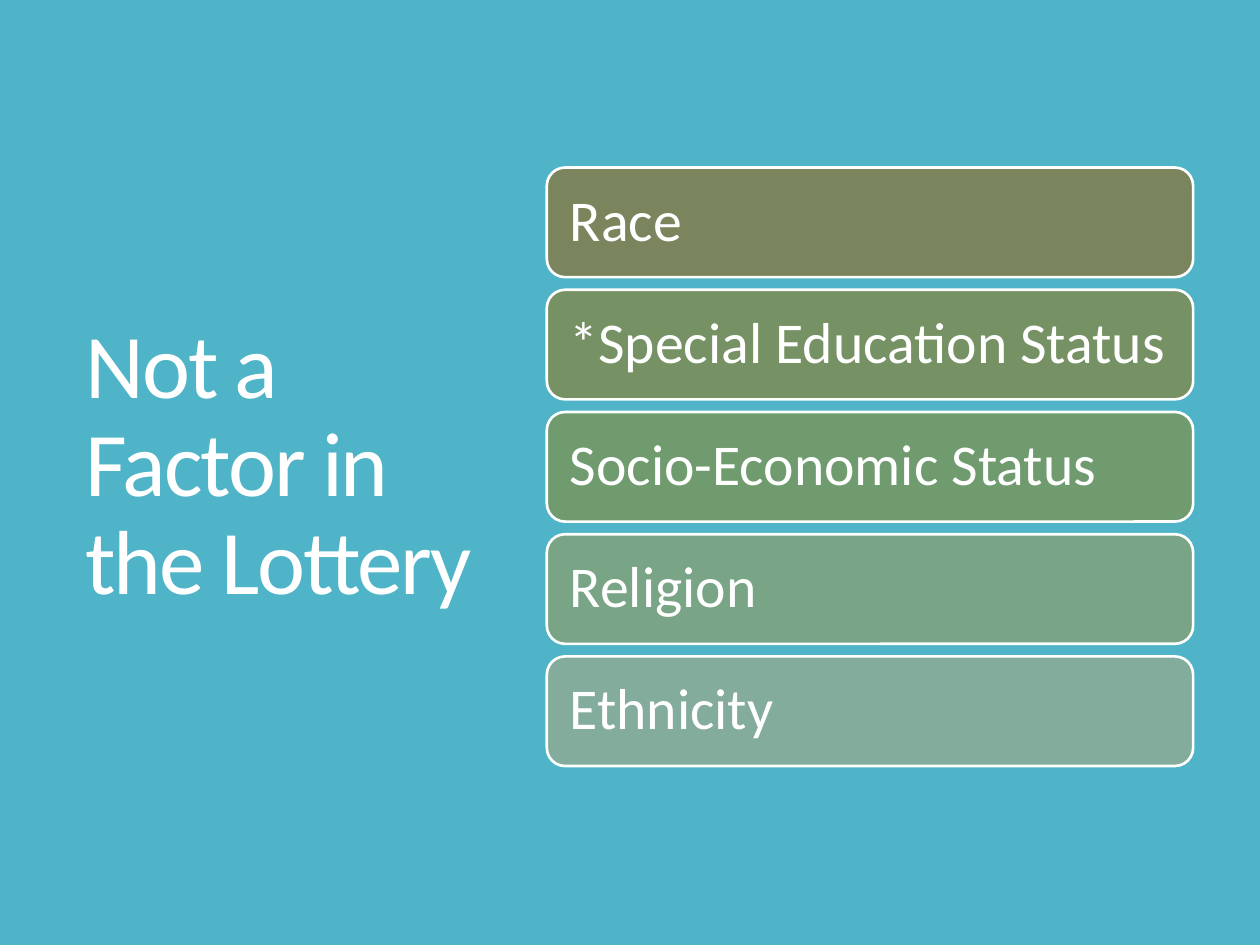
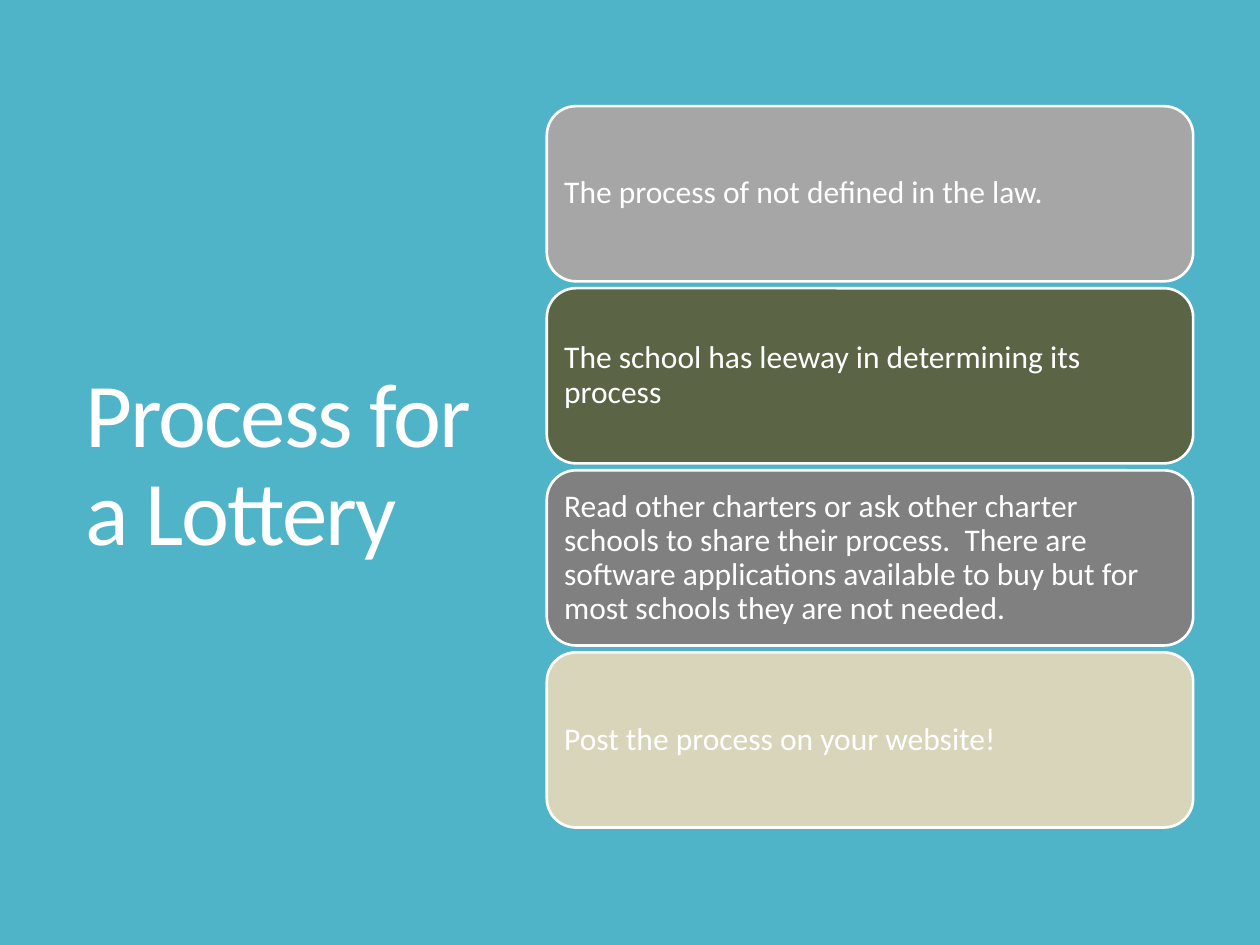
from pptx import Presentation
from pptx.dml.color import RGBColor as RGB
from pptx.enum.shapes import MSO_SHAPE as Shape
from pptx.enum.text import MSO_ANCHOR as Anchor, MSO_AUTO_SIZE as Fit, PP_ALIGN as Align
from pptx.util import Inches, Pt

TEAL = RGB(0x50, 0xB4, 0xC8)
WHITE = RGB(0xFF, 0xFF, 0xFF)
OLIVE = RGB(0x7A, 0x85, 0x5D)
MOSS = RGB(0x76, 0x91, 0x64)
GREEN = RGB(0x70, 0x9B, 0x6E)
SAGE = RGB(0x79, 0xA4, 0x85)
MIST = RGB(0x84, 0xAC, 0x9D)
SILVER = RGB(0xA6, 0xA6, 0xA6)
FOREST = RGB(0x5C, 0x64, 0x46)
GRAY = RGB(0x80, 0x80, 0x80)
SAND = RGB(0xD9, 0xD5, 0xBA)

FONT = "Calibri"
LEFT, WIDTH = 4.34, 5.13
MIDDLE = 3.705

SLIDES = [
    {
        "title": "Not a Factor in the Lottery",
        "size": 33, "height": 0.87, "gap": 0.1, "inset": 0.14,
        "bars": [
            ("Race", OLIVE),
            ("*Special Education Status", MOSS),
            ("Socio-Economic Status", GREEN),
            ("Religion", SAGE),
            ("Ethnicity", MIST),
        ],
    },
    {
        "title": "Process for a Lottery",
        "size": 18, "height": 1.39, "gap": 0.055, "inset": 0.07,
        "bars": [
            ("The process of not defined in the law.", SILVER),
            ("The school has leeway in determining its process", FOREST),
            ("Read other charters or ask other charter schools to share their "
             "process.  There are software applications available to buy but "
             "for most schools they are not needed.", GRAY),
            ("Post the process on your website!", SAND),
        ],
    },
]


def write(shape, text, size):
    frame = shape.text_frame
    frame.text = text
    frame.word_wrap = True
    frame.auto_size = Fit.NONE
    frame.vertical_anchor = Anchor.MIDDLE
    para = frame.paragraphs[0]
    para.alignment = Align.LEFT
    para.line_spacing = 0.9
    para.font.name = FONT
    para.font.size = Pt(size)
    para.font.color.rgb = WHITE
    return frame


def add_title(slide, text):
    title = slide.shapes.title
    title.left, title.top = Inches(0.58), Inches(0.7)
    title.width, title.height = Inches(3.28), Inches(6.01)
    frame = write(title, text, 52)
    frame.paragraphs[0].runs[0].font._element.set("spc", "-120")


def add_bar(slide, text, fill, top, data):
    bar = slide.shapes.add_shape(
        Shape.ROUNDED_RECTANGLE, Inches(LEFT), Inches(top),
        Inches(WIDTH), Inches(data["height"]))
    bar.shadow.inherit = False
    bar.fill.solid()
    bar.fill.fore_color.rgb = fill
    bar.line.color.rgb = WHITE
    bar.line.width = Pt(1.5)
    frame = write(bar, text, data["size"])
    inset = Inches(data["inset"])
    frame.margin_left = frame.margin_right = inset
    frame.margin_top = frame.margin_bottom = inset


def add_slide(prs, data):
    slide = prs.slides.add_slide(prs.slide_layouts[5])
    add_title(slide, data["title"])
    bars = data["bars"]
    step = data["height"] + data["gap"]
    start = MIDDLE - (len(bars) * step - data["gap"]) / 2
    for row, (text, fill) in enumerate(bars):
        add_bar(slide, text, fill, start + row * step, data)


def main():
    prs = Presentation()
    prs.slide_width, prs.slide_height = Inches(10), Inches(7.5)
    back = prs.slide_master.background.fill
    back.solid()
    back.fore_color.rgb = TEAL
    for data in SLIDES:
        add_slide(prs, data)
    prs.save("out.pptx")


if __name__ == "__main__":
    main()
